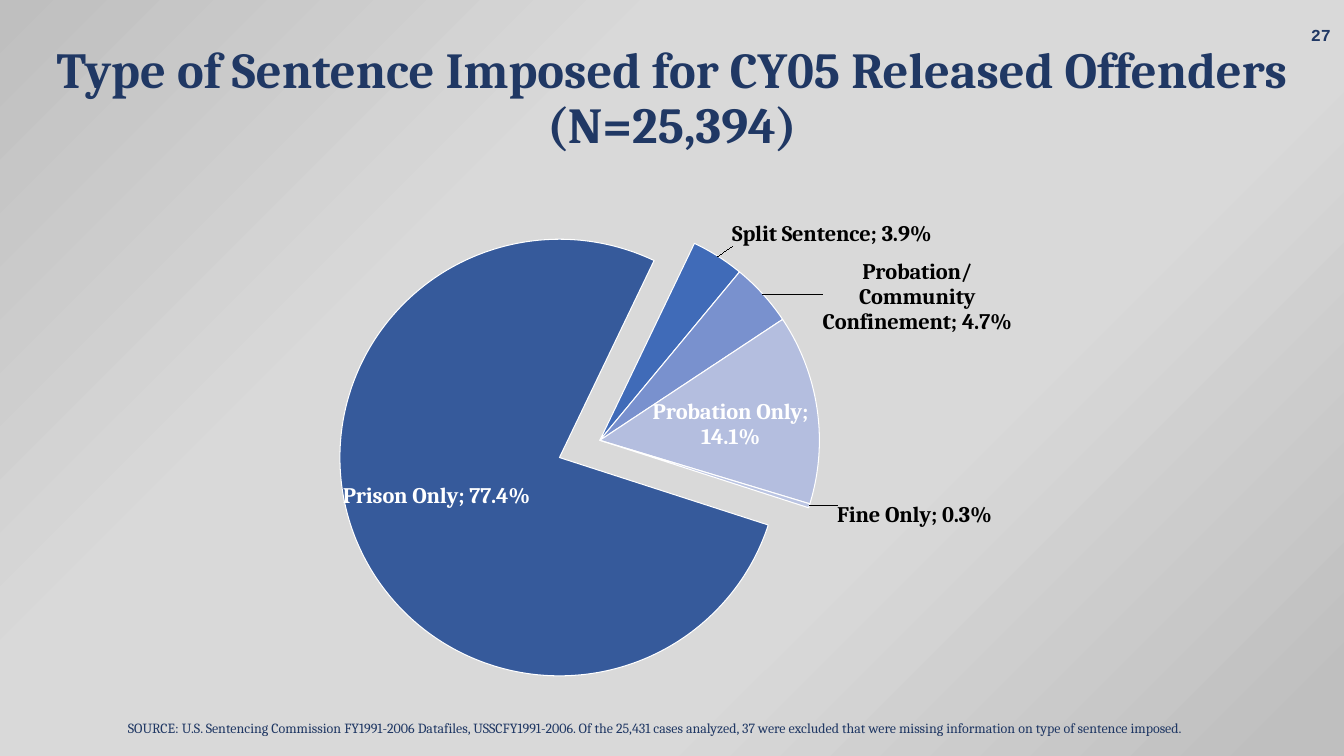
from copy import deepcopy

from lxml import etree
from pptx import Presentation
from pptx import util as u
from pptx.chart.data import CategoryChartData
from pptx.dml.color import RGBColor
from pptx.enum import chart as ch, text
from pptx.oxml import parse_xml
from pptx.oxml.ns import nsdecls, qn

NAVY = RGBColor(0x20, 0x38, 0x64)
BLACK = RGBColor(0, 0, 0)
WHITE = RGBColor(0xFF, 0xFF, 0xFF)
GREY = RGBColor(0xBF, 0xBF, 0xBF)
PALE = RGBColor(0xD9, 0xD9, 0xD9)
DEEP = RGBColor(0x36, 0x5A, 0x9B)
BLUE = RGBColor(0x40, 0x6B, 0xB8)
SKY = RGBColor(0x79, 0x91, 0xCE)
MIST = RGBColor(0xB4, 0xBE, 0xDF)
HAZE = RGBColor(0xBA, 0xC4, 0xE2)

IN, OUT = ch.XL_LABEL_POSITION.CENTER, ch.XL_LABEL_POSITION.OUTSIDE_END
# name, value, fill, label colour, label place, label shift (x, y), label size (w, h)
SLICES = [
    ("Prison Only", 0.774, DEEP, WHITE, IN, (-0.02, -0.01), (0.13, 0.12)),
    ("Split Sentence", 0.039, BLUE, BLACK, OUT, (0.01, -0.01), (0.2, 0.06)),
    ("Probation/Community Confinement", 0.047, SKY, BLACK, OUT, (0.05, 0.09), (0.18, 0.17)),
    ("Probation Only", 0.141, MIST, WHITE, IN, (0.02, 0), (0.12, 0.12)),
    ("Fine Only", 0.003, HAZE, BLACK, OUT, (0.02, -0.01), (0.2, 0.06)),
]
C15 = "http://schemas.microsoft.com/office/drawing/2012/chart"


def layout(**parts):
    """A manual chart layout, in shares of the chart's size."""
    rows = "".join(f'<c:{k} val="{v}"/>' for k, v in parts.items())
    return parse_xml(f'<c:layout {nsdecls("c")}><c:manualLayout>{rows}'
                     '</c:manualLayout></c:layout>')


class Deck:
    """Style and current slide; places are shares of the slide's size."""
    face = "Cambria"

    def __init__(self, wide, high):
        self.prs = Presentation()
        self.prs.slide_width, self.prs.slide_height = u.Inches(wide), u.Inches(high)
        self.slide = self.prs.slides.add_slide(self.prs.slide_layouts[6])

    def place(self, x, y, w, h):
        wide, high = self.prs.slide_width, self.prs.slide_height
        return [u.Emu(round(v)) for v in (x * wide, y * high, w * wide, h * high)]

    def style(self, font, size, color, bold=False, face=None):
        font.name, font.size, font.bold = face or self.face, u.Pt(size), bold
        font.color.rgb = color

    def back(self, stops):
        fill = self.slide.background.fill
        fill.gradient()
        fill.gradient_angle = 315
        first = fill.gradient_stops[0]
        first.color.rgb = GREY
        bands = self.slide.background.fill._xPr.find(".//" + qn("a:gsLst"))
        model = deepcopy(bands[0])
        for band in list(bands):
            bands.remove(band)
        for share, _ in stops:
            band = deepcopy(model)
            band.set("pos", str(share * 1000))
            bands.append(band)
        for stop, (_, color) in zip(fill.gradient_stops, stops):
            stop.color.rgb = color

    def label(self, words, box, size, align, anchor, bold=False, face=None, gap=None):
        frame = self.slide.shapes.add_textbox(*self.place(*box)).text_frame
        frame.word_wrap, frame.vertical_anchor = True, anchor
        frame.text = words
        para = frame.paragraphs[0]
        para.alignment, para.line_spacing = align, gap
        for run in para.runs:
            self.style(run.font, size, NAVY, bold, face)

    def pie(self, slices, box, start, burst, plot):
        data = CategoryChartData(number_format="0.0%")
        data.categories = [s[0] for s in slices]
        data.add_series("Series 1", [s[1] for s in slices])
        chart = self.slide.shapes.add_chart(
            ch.XL_CHART_TYPE.PIE, *self.place(*box), data).chart
        chart.has_legend = chart.has_title = False
        self.style(chart.font, 10, BLACK)
        pie = chart.plots[0]
        pie.vary_by_categories = True
        series = pie.series[0]

        # Slices and their labels
        for i, (_, _, fill, color, spot, shift, size) in enumerate(slices):
            point = series.points[i]
            point.format.fill.solid()
            point.format.fill.fore_color.rgb = fill
            point.format.line.color.rgb = WHITE
            point.format.line.width = u.Pt(0.75)
            self.style(point.data_label.font, 16, color, True)
            point.data_label.position = spot
            self.tune(series._element.findall(".//" + qn("c:dLbl"))[i], shift, size)

        # Label defaults and leader lines
        tags = series.data_labels
        self.style(tags.font, 16, BLACK, True)
        tags.number_format, tags.number_format_is_linked = "0.0%", False
        tags.show_value = tags.show_category_name = True
        lead = tags._element.find(qn("c:showLeaderLines"))
        if lead is None:
            lead = etree.SubElement(tags._element, qn("c:showLeaderLines"))
        lead.set("val", "1")

        # First slice pulled out, turn of the pie, plot area
        pulled = series._element.find(qn("c:dPt"))
        pulled.find(qn("c:spPr")).addprevious(
            parse_xml(f'<c:explosion {nsdecls("c")} val="{burst}"/>'))
        turn = pie._element.find(qn("c:firstSliceAng"))
        if turn is None:
            turn = etree.SubElement(pie._element, qn("c:firstSliceAng"))
        turn.set("val", str(start))
        area = pie._element.getparent()
        old = area.find(qn("c:layout"))
        if old is not None:
            area.remove(old)
        x, y, w, h = plot
        area.insert(0, layout(layoutTarget="inner", xMode="edge", yMode="edge",
                              x=x, y=y, w=w, h=h))

    def tune(self, tag, shift, size):
        """Show name and value, move the label and set its size."""
        spot = layout(x=shift[0], y=shift[1])
        tag.find(qn("c:idx")).addnext(spot)
        spot.addnext(parse_xml(
            f'<c:numFmt {nsdecls("c")} formatCode="0.0%" sourceLinked="0"/>'))
        for name in ("showVal", "showCatName"):
            tag.find(qn("c:" + name)).set("val", "1")
        etree.SubElement(tag, qn("c:separator")).text = "; "
        w, h = size
        tag.append(parse_xml(
            f'<c:extLst {nsdecls("c")}><c:ext uri="{{CE6537A1-D6FC-4f65-9D91-7224C49458BB}}"'
            f' xmlns:c15="{C15}"><c15:layout><c:manualLayout><c:w val="{w}"/>'
            f'<c:h val="{h}"/></c:manualLayout></c15:layout></c:ext></c:extLst>'))


def main():
    deck = Deck(13.33, 7.5)
    align, anchor = text.PP_ALIGN, text.MSO_ANCHOR

    # Background
    deck.back([(0, GREY), (33, PALE), (66, PALE), (97, GREY)])

    # Page number, title and source
    deck.label("27", (0.7727, 0.02, 0.225, 0.0533), 12, align.RIGHT, anchor.MIDDLE,
               True, "Courier New")
    deck.label("Type of Sentence Imposed for CY05 Released Offenders\v(N=25,394)",
               (0, 0.0533, 1, 0.176), 36, align.CENTER, anchor.TOP, True, gap=0.9)
    deck.label("SOURCE: U.S. Sentencing Commission FY1991-2006 Datafiles, USSCFY1991-2006. "
               "Of the 25,431 cases analyzed, 37 were excluded that were missing "
               "information on type of sentence imposed.",
               (0.0878, 0.9173, 0.8327, 0.064), 10, align.LEFT, anchor.BOTTOM, gap=0.9)

    # Pie of sentence types
    deck.pie(SLICES, (0.0915, 0.2347, 0.8252, 0.66), start=108, burst=20,
             plot=(0.23, 0.09, 0.4, 0.88))
    deck.prs.save("out.pptx")


if __name__ == "__main__":
    main()
